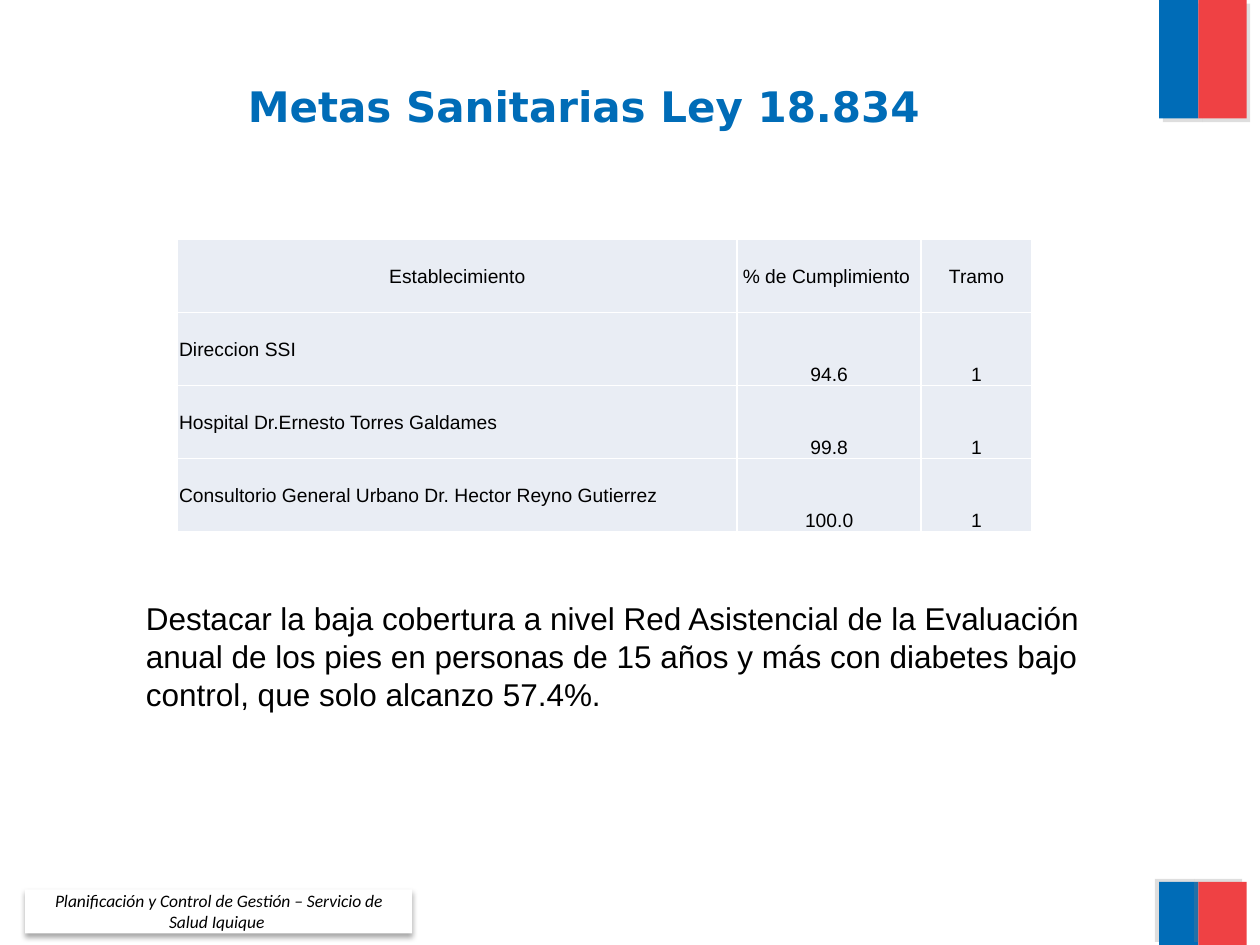
"""Build the slide on the health targets of Ley 18.834."""
from lxml.etree import SubElement
from pptx import Presentation
from pptx.dml.color import RGBColor
from pptx.enum.shapes import MSO_SHAPE
from pptx.enum.text import MSO_ANCHOR, PP_ALIGN
from pptx.oxml.ns import qn
from pptx.util import Cm, Pt

BLUE = RGBColor(0x00, 0x6C, 0xB7)
RED = RGBColor(0xEF, 0x41, 0x44)
WHITE = RGBColor(0xFF, 0xFF, 0xFF)
BLACK = RGBColor(0x00, 0x00, 0x00)
GRAY = RGBColor(0x80, 0x80, 0x80)
PALE_BLUE = RGBColor(0xE9, 0xED, 0xF4)

TITLE_FONT = {"name": "DejaVu Sans", "size": Pt(24), "bold": True}
TABLE_FONT = {"name": "Arial", "size": Pt(11), "bold": False}
BODY_FONT = {"name": "Arial", "size": Pt(18)}
FOOTER_FONT = {"name": "Calibri", "size": Pt(10), "italic": True}
CELL_MARGINS = {
    "margin_left": Cm(0.03),
    "margin_right": Cm(0.03),
    "margin_top": Cm(0.03),
    "margin_bottom": Cm(0),
}
TOP_SHADOW = {"color": GRAY, "alpha": 25, "blur": 0, "distance": 3, "angle": 45}
BOTTOM_SHADOW = {**TOP_SHADOW, "angle": 215}
FOOTER_SHADOW = {"color": BLACK, "alpha": 35, "blur": 3.1, "distance": 1.8, "angle": 90}

ROWS = [
    ("Establecimiento", "% de Cumplimiento ", "Tramo"),
    ("Direccion SSI", "94.6", "1"),
    ("Hospital Dr.Ernesto Torres Galdames", "99.8", "1"),
    ("Consultorio General Urbano Dr. Hector Reyno Gutierrez", "100.0", "1"),
]
COLUMN_WIDTHS = (11.28, 3.71, 2.23)
ROW_HEIGHT = 1.47


def apply_format(target, values):
    for name, value in values.items():
        setattr(target, name, value)


class SlideBuilder:
    def __init__(self, slide):
        self.slide = slide

    def set_text(self, text_frame, text, font, color=BLACK, alignment=PP_ALIGN.LEFT):
        text_frame.word_wrap = True
        paragraph = text_frame.paragraphs[0]
        paragraph.alignment = alignment
        run = paragraph.add_run()
        run.text = text
        apply_format(run.font, font)
        run.font.color.rgb = color

    def add_title(self, text, left, top, width, height):
        title = self.slide.shapes.title
        box = {"left": left, "top": top, "width": width, "height": height}
        apply_format(title, {name: Cm(value) for name, value in box.items()})
        title.text_frame.vertical_anchor = MSO_ANCHOR.MIDDLE
        title.text_frame.margin_top = Cm(0.33)
        self.set_text(title.text_frame, text, TITLE_FONT, BLUE, PP_ALIGN.CENTER)

    def add_rectangle(self, left, top, width, height, color, shadow):
        shape = self.slide.shapes.add_shape(
            MSO_SHAPE.RECTANGLE, Cm(left), Cm(top), Cm(width), Cm(height))
        shape.fill.solid()
        shape.fill.fore_color.rgb = color
        shape.line.fill.background()
        self.add_shadow(shape, shadow)
        return shape

    def add_shadow(self, shape, shadow):
        shape.shadow.inherit = False
        effects = shape._element.spPr.find(qn("a:effectLst"))
        outer = SubElement(
            effects, qn("a:outerShdw"),
            blurRad=str(Pt(shadow["blur"])), dist=str(Pt(shadow["distance"])),
            dir=str(shadow["angle"] * 60000), algn="ctr", rotWithShape="0")
        color = SubElement(outer, qn("a:srgbClr"), val=str(shadow["color"]))
        SubElement(color, qn("a:alpha"), val=str(shadow["alpha"] * 1000))

    def add_footer(self, text, left, top, width, height):
        shape = self.add_rectangle(left, top, width, height, WHITE, FOOTER_SHADOW)
        shape.text_frame.vertical_anchor = MSO_ANCHOR.MIDDLE
        self.set_text(shape.text_frame, text, FOOTER_FONT, alignment=PP_ALIGN.CENTER)

    def add_text(self, text, left, top, width, height):
        text_box = self.slide.shapes.add_textbox(
            Cm(left), Cm(top), Cm(width), Cm(height))
        self.set_text(text_box.text_frame, text, BODY_FONT)

    def add_table(self, rows, left, top, column_widths, row_height):
        table = self.slide.shapes.add_table(
            len(rows), len(column_widths), Cm(left), Cm(top),
            Cm(sum(column_widths)), Cm(row_height * len(rows))).table
        apply_format(table, {"first_row": False, "horz_banding": False})
        for column, width in zip(table.columns, column_widths):
            column.width = Cm(width)
        for row_index, row in enumerate(rows):
            table.rows[row_index].height = Cm(row_height)
            for column_index, text in enumerate(row):
                is_name = row_index > 0 and column_index == 0
                is_value = row_index > 0 and column_index > 0
                self.fill_cell(
                    table.cell(row_index, column_index), text,
                    PP_ALIGN.LEFT if is_name else PP_ALIGN.CENTER,
                    MSO_ANCHOR.BOTTOM if is_value else MSO_ANCHOR.MIDDLE)

    def fill_cell(self, cell, text, alignment, anchor):
        apply_format(cell, {**CELL_MARGINS, "vertical_anchor": anchor})
        properties = cell._tc.get_or_add_tcPr()
        for side in ("L", "R", "T", "B"):
            border = SubElement(properties, qn(f"a:ln{side}"), w=str(Pt(1)))
            fill = SubElement(border, qn("a:solidFill"))
            SubElement(fill, qn("a:srgbClr"), val=str(WHITE))
        cell.fill.solid()
        cell.fill.fore_color.rgb = PALE_BLUE
        self.set_text(cell.text_frame, text, TABLE_FONT, alignment=alignment)


def main():
    presentation = Presentation()
    presentation.slide_width = Cm(25.4)
    presentation.slide_height = Cm(19.05)
    builder = SlideBuilder(presentation.slides.add_slide(presentation.slide_layouts[5]))

    for top, height, shadow in ((0, 2.39, TOP_SHADOW), (17.78, 1.27, BOTTOM_SHADOW)):
        for left, width, color in ((23.37, 0.79, BLUE), (24.16, 0.97, RED)):
            builder.add_rectangle(left, top, width, height, color, shadow)

    builder.add_title("Metas Sanitarias Ley 18.834", 0.43, 0.43, 22.68, 3.18)
    builder.add_footer(
        "Planificación y Control de Gestión – Servicio de Salud Iquique ",
        0.51, 17.93, 7.8, 0.89)
    builder.add_table(ROWS, 3.58, 4.83, COLUMN_WIDTHS, ROW_HEIGHT)
    builder.add_text(
        "Destacar la baja cobertura a nivel Red Asistencial de la Evaluación anual "
        "de los pies en personas de 15 años y más con diabetes bajo control, "
        "que solo alcanzo 57.4%.", 2.69, 11.96, 20.4, 2.57)
    presentation.save("out.pptx")


if __name__ == "__main__":
    main()
